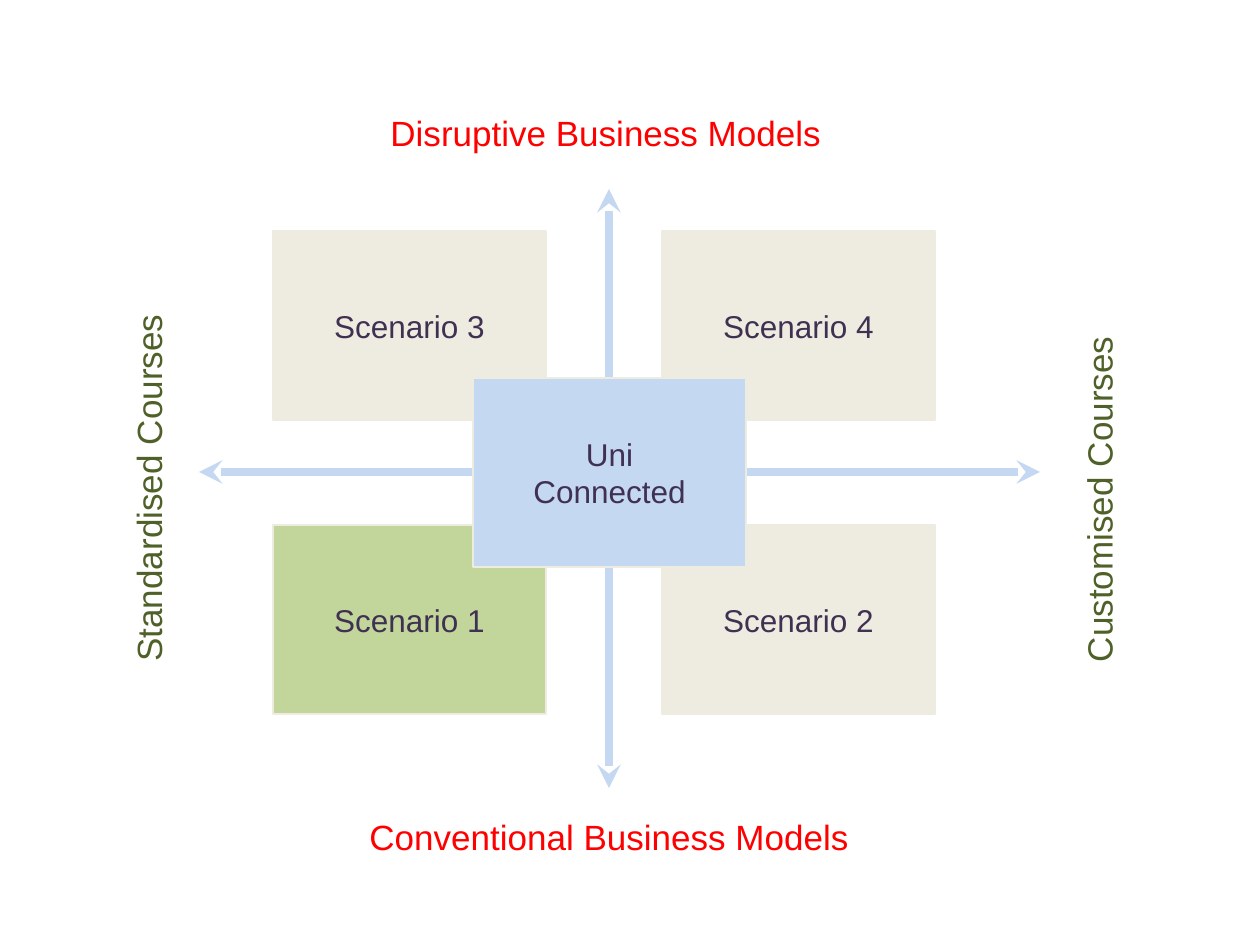
from lxml.etree import SubElement
from pptx import Presentation
from pptx.dml.color import RGBColor
from pptx.enum.shapes import MSO_CONNECTOR, MSO_SHAPE
from pptx.enum.text import MSO_ANCHOR, PP_ALIGN
from pptx.oxml.ns import qn
from pptx.util import Emu, Pt

SCALE = 914400 / 126  # EMU per px
COLORS = {
    "model": "FF0000",
    "course": "4F6128",
    "axis": "C5D8F1",
    "box": "EEECE1",
    "active": "C2D59B",
    "text": "403152",
}
BOX_W, BOX_H = 273, 189
GRID_X, GRID_Y = 273, 231
PITCH_X, PITCH_Y = 389, 294
CENTER_X, CENTER_Y = 609, 472
LABEL_H = 55


def px(*values):
    return [Emu(round(v * SCALE)) for v in values]


def rgb(name):
    return RGBColor.from_string(COLORS[name])


class MatrixSlide:
    """Holds the slide and the shared style of its elements."""

    font = "Arial"
    label_size = Pt(20)
    box_size = Pt(18)

    def __init__(self, slide):
        self.shapes = slide.shapes

    def style(self, p, size, color):
        p.font.name = self.font
        p.font.size = size
        p.font.color.rgb = rgb(color)

    def label(self, text, x, y, w, color, rotation=0):
        sp = self.shapes.add_textbox(*px(x, y, w, LABEL_H))
        sp.rotation = rotation
        tf = sp.text_frame
        tf.word_wrap = True
        tf.text = text
        self.style(tf.paragraphs[0], self.label_size, color)

    def axis(self, x1, y1, x2, y2):
        """Draw a line with an arrowhead at both ends."""
        line = self.shapes.add_connector(MSO_CONNECTOR.STRAIGHT, *px(x1, y1, x2, y2))
        line.line.color.rgb = rgb("axis")
        line.line.width = Pt(4.5)
        ln = line.line._get_or_add_ln()
        for end in ("a:headEnd", "a:tailEnd"):
            SubElement(ln, qn(end), type="stealth")
        SubElement(line._element.spPr, qn("a:effectLst"))

    def box(self, text, x, y, fill):
        sp = self.shapes.add_shape(MSO_SHAPE.RECTANGLE, *px(x, y, BOX_W, BOX_H))
        sp.shadow.inherit = False
        sp.fill.solid()
        sp.fill.fore_color.rgb = rgb(fill)
        sp.line.color.rgb = rgb("box")
        sp.line.width = Pt(0.75)
        tf = sp.text_frame
        tf.word_wrap = True
        tf.vertical_anchor = MSO_ANCHOR.MIDDLE
        tf.text = text
        for p in tf.paragraphs:
            p.alignment = PP_ALIGN.CENTER
            self.style(p, self.box_size, "text")


def main():
    prs = Presentation()
    prs.slide_width, prs.slide_height = px(1260, 945)
    s = MatrixSlide(prs.slides.add_slide(prs.slide_layouts[6]))

    s.label("Disruptive Business Models", 378, 105, 460, "model")
    s.label("Conventional Business Models", 357, 809, 509, "model")
    s.label("Standardised Courses", -39, 459, 375, "course", 270)
    s.label("Customised Courses", 922, 470, 354, "course", 270)

    s.axis(CENTER_X, 189, CENTER_X, 788)
    s.axis(199, CENTER_Y, 1040, CENTER_Y)

    for row, numbers in enumerate([(3, 4), (1, 2)]):
        for col, number in enumerate(numbers):
            fill = "active" if number == 1 else "box"
            s.box(f"Scenario {number}", GRID_X + col * PITCH_X,
                  GRID_Y + row * PITCH_Y, fill)
    s.box("Uni\nConnected", CENTER_X - BOX_W // 2, CENTER_Y - BOX_H // 2, "axis")

    prs.save("out.pptx")


if __name__ == "__main__":
    main()
